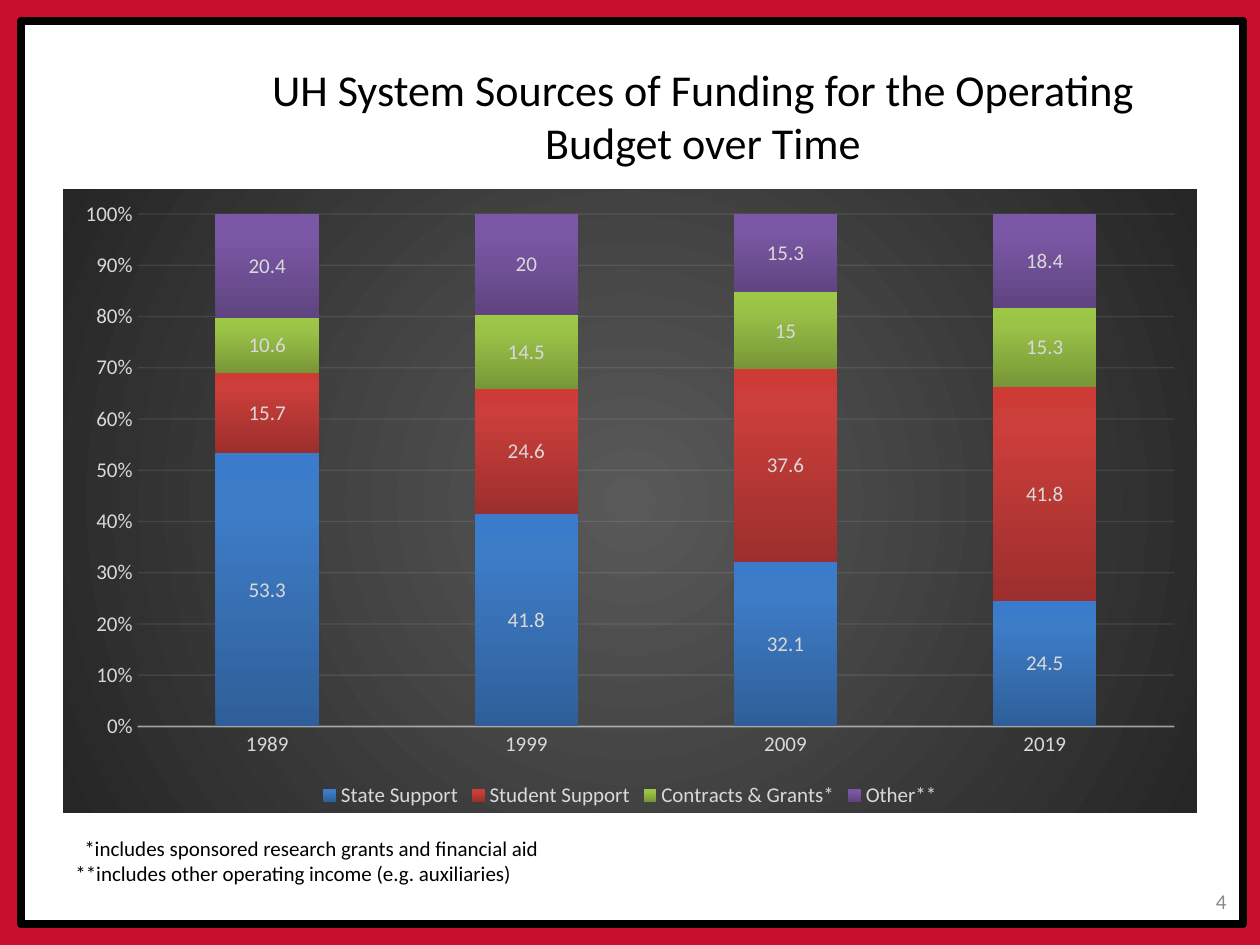
from lxml import etree
from pptx import Presentation
from pptx import util as u
from pptx.chart.data import CategoryChartData
from pptx.dml.color import RGBColor
from pptx.enum import chart as ch, shapes, text
from pptx.oxml import parse_xml
from pptx.oxml.ns import qn

PX = 914400 / 126
THEME = {
    "font": "Calibri",
    "title": 25.2, "body": 12,
    "red": "C8102E", "paper": "FFFFFF", "ink": "000000", "number": "898989",
    "chart_text": "D9D9D9", "chart_line": "F2F2F2",
    "backdrop": [(0, "595959"), (100, "262626")],
    "bars": [
        [(0, "2F5F99"), (80, "3D7CC7"), (100, "3A7CCB")],
        [(0, "9C2F2D"), (80, "CB3E3A"), (100, "CE3B37")],
        [(0, "779737"), (80, "9BC348"), (100, "9DC746")],
        [(0, "5F4480"), (80, "7B58A6"), (100, "7C57A8")],
    ],
}
RGB = RGBColor.from_string
UPWARD = '<a:lin ang="16200000" scaled="0"/>'
RADIAL = '<a:path path="circle"><a:fillToRect l="50000" t="50000" r="50000" b="50000"/></a:path>'


def gradient(stops, direction):
    marks = "".join(
        f'<a:gs pos="{pos * 1000}"><a:srgbClr val="{color}"/></a:gs>' for pos, color in stops)
    return parse_xml(
        '<a:gradFill xmlns:a="http://schemas.openxmlformats.org/drawingml/2006/main">'
        f'<a:gsLst>{marks}</a:gsLst>{direction}</a:gradFill>')


def style(font, size, color):
    font.name = THEME["font"]
    font.size = u.Pt(size)
    font.color.rgb = RGB(color)


prs = Presentation()
prs.slide_width, prs.slide_height = u.Inches(10), u.Inches(7.5)
slide = prs.slides.add_slide(prs.slide_layouts[6])
slide.background.fill.solid()
slide.background.fill.fore_color.rgb = RGB(THEME["red"])

frame = slide.shapes.add_shape(
    shapes.MSO_SHAPE.RECTANGLE, *[round(n * PX) for n in (21, 21, 1222, 903)])
frame.shadow.inherit = False
frame.fill.solid()
frame.fill.fore_color.rgb = RGB(THEME["paper"])
frame.line.color.rgb = RGB(THEME["ink"])
frame.line.width = u.Pt(4.5)
etree.SubElement(frame.line._get_or_add_ln(), qn("a:round"))

MIDDLE, TOP = text.MSO_ANCHOR.MIDDLE, text.MSO_ANCHOR.TOP
LEFT, CENTER, RIGHT = text.PP_ALIGN.LEFT, text.PP_ALIGN.CENTER, text.PP_ALIGN.RIGHT
texts = [
    ((955, 876, 284, 50), ["4"], "body", "number", RIGHT, MIDDLE),
    ((199, 73, 1008, 84), ["UH System Sources of Funding for the Operating Budget over Time"],
     "title", "ink", CENTER, MIDDLE),
    ((63, 829, 882, 63), ["*includes sponsored research grants and financial aid",
                          "**includes other operating income (e.g. auxiliaries)"],
     "body", "ink", LEFT, TOP),
]
for place, lines, size, color, align, anchor in texts:
    box = slide.shapes.add_textbox(*[round(n * PX) for n in place]).text_frame
    box.word_wrap = True
    box.vertical_anchor = anchor
    box.text = "\n".join(lines)
    for paragraph in box.paragraphs:
        paragraph.alignment = align
        style(paragraph.font, THEME[size], THEME[color])

first_note = box.paragraphs[0]
first_note._p.get_or_add_pPr().set("marL", str(round(9 * PX)))

funding = CategoryChartData()
funding.categories = ["1989", "1999", "2009", "2019"]
funding.add_series("State Support", [53.3, 41.8, 32.1, 24.5])
funding.add_series("Student Support", [15.7, 24.6, 37.6, 41.8])
funding.add_series("Contracts & Grants*", [10.6, 14.5, 15, 15.3])
funding.add_series("Other**", [20.4, 20, 15.3, 18.4])
chart = slide.shapes.add_chart(
    ch.XL_CHART_TYPE.COLUMN_STACKED_100,
    *[round(n * PX) for n in (63, 189, 1134, 624)], funding).chart
chart.has_title = False
style(chart.font, THEME["body"], THEME["chart_text"])

backdrop = etree.Element(qn("c:spPr"))
backdrop.append(gradient(THEME["backdrop"], RADIAL))
chart._chartSpace.find(qn("c:chart")).addnext(backdrop)

chart.has_legend = True
chart.legend.position = ch.XL_LEGEND_POSITION.BOTTOM
chart.legend.include_in_layout = False
style(chart.legend.font, THEME["body"], THEME["chart_text"])

plot = chart.plots[0]
plot.gap_width, plot.overlap = 150, 100
plot.vary_by_categories = False
for series, stops in zip(plot.series, THEME["bars"]):
    series._element.get_or_add_spPr().append(gradient(stops, UPWARD))
    labels = series.data_labels
    labels.show_value = True
    labels.position = ch.XL_LABEL_POSITION.CENTER
    style(labels.font, THEME["body"], THEME["chart_text"])

years, shares = chart.category_axis, chart.value_axis
for axis in (years, shares):
    axis.major_tick_mark = axis.minor_tick_mark = ch.XL_TICK_MARK.NONE
    style(axis.tick_labels.font, THEME["body"], THEME["chart_text"])
shares.minimum_scale, shares.maximum_scale, shares.major_unit = 0, 1, 0.1
shares.tick_labels.number_format = "0%"
shares.tick_labels.number_format_is_linked = False
shares.format.line.fill.background()

grid = shares.major_gridlines
for line, owner, width, opacity in [
    (years.format.line, years._element.find(qn("c:spPr")), 1, 54),
    (grid.format.line, shares._element.find(qn("c:majorGridlines")), 0.75, 10),
]:
    line.color.rgb = RGB(THEME["chart_line"])
    line.width = u.Pt(width)
    tint = next(owner.iter(qn("a:srgbClr")))
    etree.SubElement(tint, qn("a:alpha")).set("val", str(opacity * 1000))

prs.save("out.pptx")
